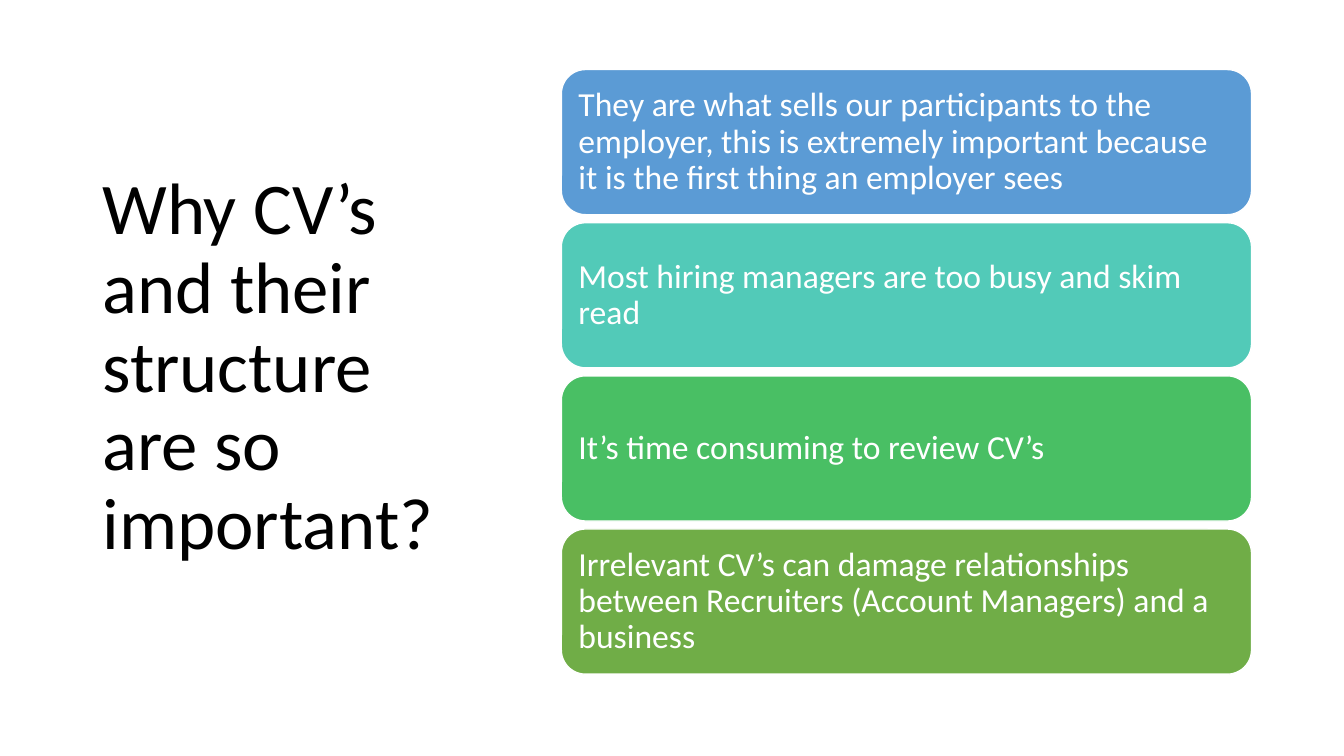
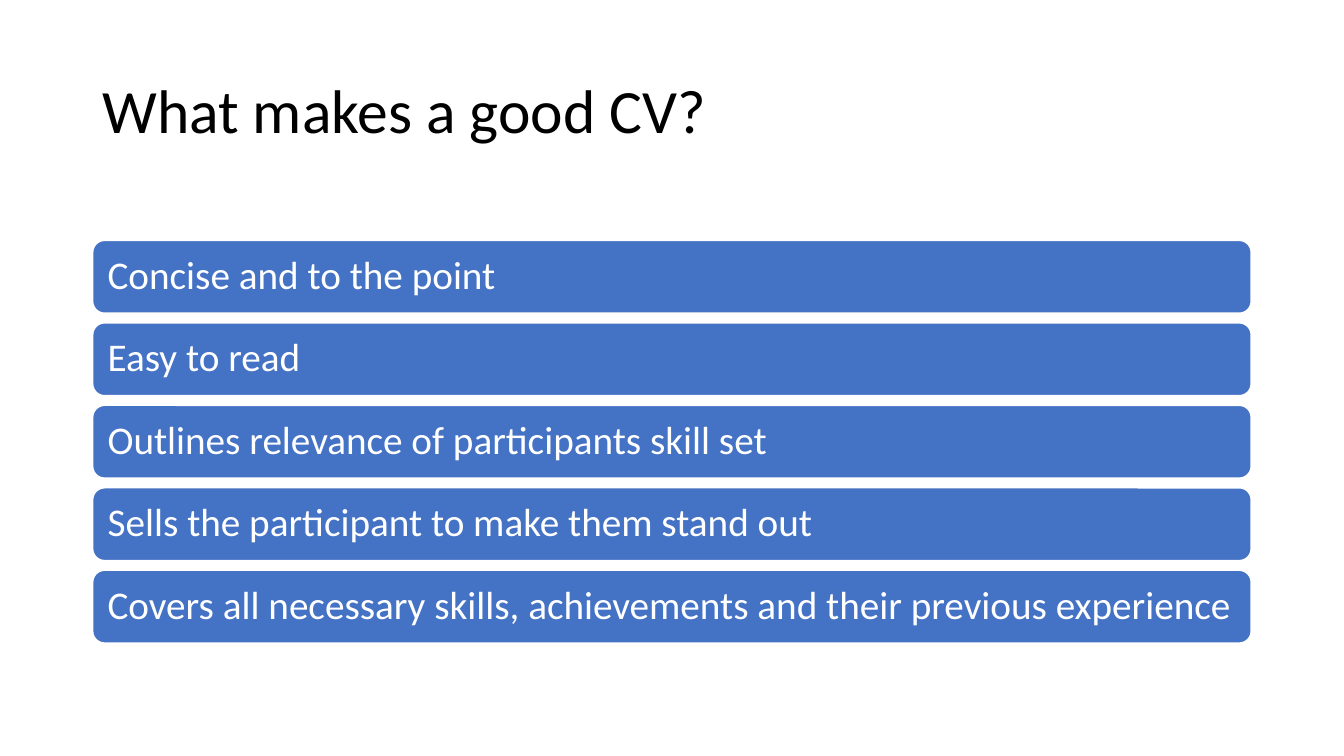
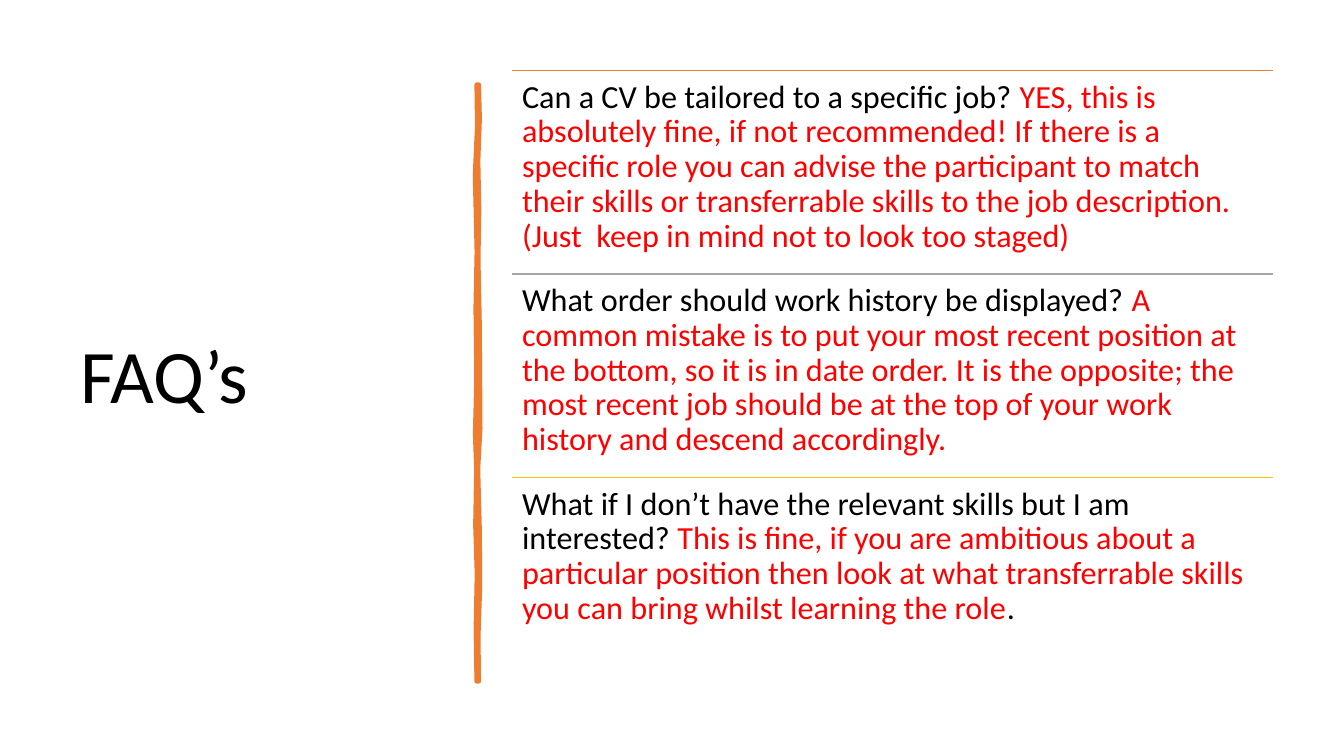
from dataclasses import dataclass

from lxml.etree import SubElement
from pptx import Presentation
from pptx.dml.color import RGBColor
from pptx.enum.shapes import MSO_CONNECTOR, MSO_SHAPE
from pptx.enum.text import MSO_ANCHOR, MSO_AUTO_SIZE, PP_ALIGN
from pptx.oxml.ns import qn
from pptx.util import Pt


@dataclass(frozen=True)
class Theme:
    font: str = "Calibri"
    black: str = "000000"
    white: str = "FFFFFF"
    red: str = "FF0000"
    blue: str = "4472C4"
    orange: str = "ED7D31"
    grey: str = "A5A5A5"
    gold: str = "FFC000"
    card_colors: tuple = ("5B9BD5", "52CAB8", "49BF64", "70AD47")
    line_spacing: float = 0.9
    inset_ratio: float = 0.3  # text inset as a share of the type size
    tall_title: int = 52
    wide_title: int = 44
    faq_title: int = 54
    card_text: int = 24
    bar_text: int = 28
    faq_text: int = 23


THEME = Theme()

REASONS = [
    "They are what sells our participants to the employer, this is extremely "
    "important because it is the first thing an employer sees",
    "Most hiring managers are too busy and skim read",
    "It’s time consuming to review CV’s",
    "Irrelevant CV’s can damage relationships between Recruiters "
    "(Account Managers) and a business",
]

QUALITIES = [
    "Concise and to the point",
    "Easy to read",
    "Outlines relevance of participants skill set",
    "Sells the participant to make them stand out",
    "Covers all necessary skills, achievements and their previous experience",
]

# Rule colour, then the runs of the answer as (text, colour)
FAQS = [
    (THEME.orange, [
        ("Can a CV be tailored to a specific job? ", THEME.black),
        ("YES, this is absolutely fine, if not recommended! If there is a "
         "specific role you can advise the participant to match their skills "
         "or transferrable skills to the job description. "
         "(Just  keep in mind not to look too staged)", THEME.red),
    ]),
    (THEME.grey, [
        ("What order should work history be displayed? ", THEME.black),
        ("A common mistake is to put your most recent position at the bottom, "
         "so it is in date order. It is the opposite; the most recent job "
         "should be at the top of your work history and descend accordingly.",
         THEME.red),
    ]),
    (THEME.gold, [
        ("What if I don’t have the relevant skills but I am interested? ",
         THEME.black),
        ("This is fine, if you are ambitious about a particular position then "
         "look at what transferrable skills you can bring whilst learning the "
         "role", THEME.red),
        (".", THEME.black),
    ]),
]

# Brush stroke edges, in points: the right one downwards, the left one upwards
BRUSH_EDGES = [
    (342, 60.5), (342.6, 85), (341.5, 115), (342.2, 150), (341.6, 185),
    (342.5, 230), (342.8, 270), (343, 306), (341.4, 335), (342.6, 380),
    (342.8, 420), (341.6, 455), (342, 486.7),
    (340.5, 486.7), (339.9, 450), (340.7, 410), (339.6, 375), (340.3, 335),
    (339.4, 310), (340.4, 270), (339.8, 220), (340.6, 180), (339.3, 125),
    (340.9, 90), (340.5, 60.5),
]


def rgb(code):
    return RGBColor.from_string(code)


def style_paragraph(para, size, color):
    para.alignment = PP_ALIGN.LEFT
    para.line_spacing = THEME.line_spacing
    para.font.name = THEME.font
    para.font.size = Pt(size)
    para.font.color.rgb = rgb(color)


def prepare_frame(frame, anchor, inset):
    frame.word_wrap = True
    frame.auto_size = MSO_AUTO_SIZE.NONE
    frame.vertical_anchor = anchor
    frame.margin_left = frame.margin_right = Pt(inset)
    frame.margin_top = frame.margin_bottom = Pt(inset)


def add_titled_page(deck, text, size, left, top, width, height):
    page = deck.slides.add_slide(deck.slide_layouts.get_by_name("Title Only"))
    title = page.shapes.title
    title.left, title.top = Pt(left), Pt(top)
    title.width, title.height = Pt(width), Pt(height)
    title.text_frame.text = text
    prepare_frame(title.text_frame, MSO_ANCHOR.MIDDLE, 7.2)
    style_paragraph(title.text_frame.paragraphs[0], size, THEME.black)
    return page


def add_card_stack(page, texts, colors, size, line_width, left, top, width,
                   height, pitch):
    """Stack rounded cards downwards, one every pitch points."""
    for row, (text, color) in enumerate(zip(texts, colors)):
        card = page.shapes.add_shape(
            MSO_SHAPE.ROUNDED_RECTANGLE,
            Pt(left), Pt(top + row * pitch), Pt(width), Pt(height))
        card.shadow.inherit = False
        card.fill.solid()
        card.fill.fore_color.rgb = rgb(color)
        card.line.color.rgb = rgb(THEME.white)
        card.line.width = Pt(line_width)
        card.text_frame.text = text
        prepare_frame(card.text_frame, MSO_ANCHOR.MIDDLE,
                      size * THEME.inset_ratio)
        style_paragraph(card.text_frame.paragraphs[0], size, THEME.white)


def add_rule(page, color, left, top, width):
    rule = page.shapes.add_connector(
        MSO_CONNECTOR.STRAIGHT, Pt(left), Pt(top), Pt(left + width), Pt(top))
    rule.line.color.rgb = rgb(color)
    rule.line.width = Pt(1)
    SubElement(rule.element.spPr, qn("a:effectLst"))


def add_brush_stroke(page):
    points = [(Pt(x), Pt(y)) for x, y in BRUSH_EDGES]
    builder = page.shapes.build_freeform(*points[0])
    builder.add_line_segments(points[1:], close=True)
    brush = builder.convert_to_shape()
    brush.shadow.inherit = False
    brush.fill.solid()
    brush.fill.fore_color.rgb = rgb(THEME.orange)
    brush.line.color.rgb = rgb(THEME.orange)
    brush.line.width = Pt(3.25)


def add_faq_list(page, left, top, width, height):
    for row, (rule_color, runs) in enumerate(FAQS):
        row_top = top + row * height
        add_rule(page, rule_color, left, row_top, width)
        box = page.shapes.add_textbox(
            Pt(left), Pt(row_top), Pt(width), Pt(height))
        prepare_frame(box.text_frame, MSO_ANCHOR.TOP,
                      THEME.faq_text * THEME.inset_ratio)
        para = box.text_frame.paragraphs[0]
        style_paragraph(para, THEME.faq_text, THEME.black)
        for text, color in runs:
            span = para.add_run()
            span.text = text
            span.font.color.rgb = rgb(color)


def main():
    deck = Presentation()
    deck.slide_width, deck.slide_height = Pt(960), Pt(540)

    page = add_titled_page(
        deck, "Why CV’s and their structure are so important?",
        THEME.tall_title, left=66, top=44, width=266, height=438.5)
    add_card_stack(page, REASONS, THEME.card_colors, THEME.card_text, 1,
                   left=401, top=49.7, width=493, height=103.7, pitch=109.4)

    page = add_titled_page(
        deck, "What makes a good CV?",
        THEME.wide_title, left=66, top=28.75, width=828, height=104.4)
    add_card_stack(page, QUALITIES, [THEME.blue] * len(QUALITIES),
                   THEME.bar_text, 1.5,
                   left=66, top=171.5, width=828, height=52.5, pitch=58.9)

    page = add_titled_page(
        deck, "FAQ’s",
        THEME.faq_title, left=50, top=50.4, width=269, height=440)
    add_brush_stroke(page)
    add_faq_list(page, left=366, top=50.4, width=543.5, height=145.4)

    deck.save("out.pptx")


if __name__ == "__main__":
    main()
